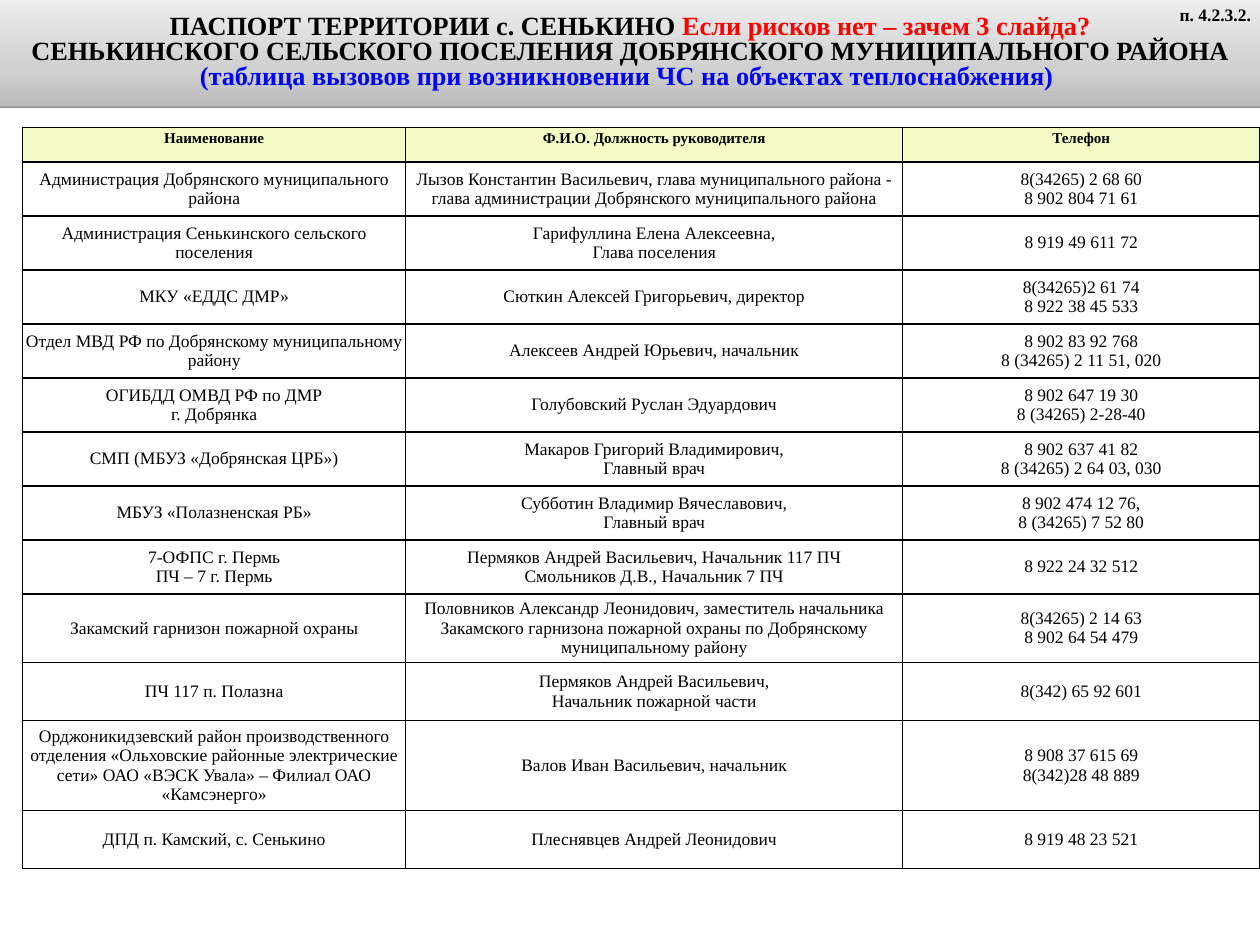
"""Builds the emergency call table slide for the village of Senkino."""
from pptx import Presentation, oxml, util as u
from pptx.dml.color import RGBColor
from pptx.enum import text as t

NS = 'xmlns:a="http://schemas.openxmlformats.org/drawingml/2006/main"'


def write(para, words, size, color="000000", bold=False, align=t.PP_ALIGN.CENTER):
    para.alignment = align
    run = para.add_run()
    run.text = words
    font = run.font
    font.name, font.size, font.bold = "Times New Roman", u.Pt(size), bold
    font.color.rgb = RGBColor.from_string(color)


deck = Presentation()
deck.slide_width, deck.slide_height = u.Inches(14), u.Inches(10.5)
slide = deck.slides.add_slide(deck.slide_layouts[5])

title = slide.shapes.title
title.left, title.top = u.Inches(0), u.Inches(0)
title.width, title.height = u.Inches(14), u.Inches(1.18)
stops = "".join(
    f'<a:gs pos="{pos * 1000}"><a:srgbClr val="{color}"/></a:gs>'
    for pos, color in [(0, "BCBCBC"), (35, "D0D0D0"), (100, "EDEDED")])
band = title.element.spPr
band.append(oxml.parse_xml(
    f'<a:gradFill {NS} rotWithShape="1"><a:gsLst>{stops}</a:gsLst>'
    '<a:lin ang="16200000" scaled="1"/></a:gradFill>'))
band.append(oxml.parse_xml(
    f'<a:effectLst {NS}><a:outerShdw blurRad="0" dist="{u.Pt(1.6)}" dir="5400000" rotWithShape="0">'
    '<a:srgbClr val="000000"><a:alpha val="38000"/></a:srgbClr></a:outerShdw></a:effectLst>'))
frame = title.text_frame
frame.word_wrap = True
frame.auto_size = t.MSO_AUTO_SIZE.NONE
frame.vertical_anchor = t.MSO_ANCHOR.MIDDLE
heads = [
    [("ПАСПОРТ ТЕРРИТОРИИ с. СЕНЬКИНО ", "000000"),
     ("Если рисков нет – зачем 3 слайда?", "FF0000")],
    [("СЕНЬКИНСКОГО СЕЛЬСКОГО ПОСЕЛЕНИЯ ДОБРЯНСКОГО МУНИЦИПАЛЬНОГО РАЙОНА", "000000")],
    [("(таблица вызовов при возникновении ЧС на объектах теплоснабжения) ", "0000FF")],
]
for i, runs in enumerate(heads):
    para = frame.add_paragraph() if i else frame.paragraphs[0]
    para.line_spacing = 0.8
    for words, color in runs:
        write(para, words, 21, color, True)

note = slide.shapes.add_textbox(u.Inches(12.91), u.Inches(0), u.Inches(1.09), u.Inches(0.33))
note.text_frame.word_wrap = True
write(note.text_frame.paragraphs[0], "п. 4.2.3.2.", 14, bold=True, align=t.PP_ALIGN.RIGHT)

rows = [
    ("Наименование", "Ф.И.О. Должность руководителя", "Телефон"),
    ("Администрация Добрянского муниципального района",
     "Лызов Константин Васильевич, глава муниципального района - "
     "глава администрации Добрянского муниципального района",
     "8(34265) 2 68 60\n8 902 804 71 61"),
    ("Администрация Сенькинского сельского поселения",
     "Гарифуллина Елена Алексеевна,\nГлава поселения", "8 919 49 611 72"),
    ("МКУ «ЕДДС ДМР»", "Сюткин Алексей Григорьевич, директор",
     "8(34265)2 61 74\n8 922 38 45 533"),
    ("Отдел МВД РФ по Добрянскому муниципальному району",
     "Алексеев Андрей Юрьевич, начальник", "8 902 83 92 768\n8 (34265) 2 11 51, 020"),
    ("ОГИБДД ОМВД РФ по ДМР\nг. Добрянка", "Голубовский Руслан Эдуардович",
     "8 902 647 19 30\n8 (34265) 2-28-40"),
    ("СМП (МБУЗ «Добрянская ЦРБ»)", "Макаров Григорий Владимирович,\nГлавный врач",
     "8 902 637 41 82\n8 (34265) 2 64 03, 030"),
    ("МБУЗ «Полазненская РБ»", "Субботин Владимир Вячеславович,\nГлавный врач",
     "8 902 474 12 76,\n8 (34265) 7 52 80"),
    ("7-ОФПС г. Пермь\nПЧ – 7 г. Пермь",
     "Пермяков Андрей Васильевич, Начальник 117 ПЧ\nСмольников Д.В., Начальник 7 ПЧ",
     "8 922 24 32 512"),
    ("Закамский гарнизон пожарной охраны",
     "Половников Александр Леонидович, заместитель начальника Закамского гарнизона "
     "пожарной охраны по Добрянскому муниципальному району",
     "8(34265) 2 14 63\n8 902 64 54 479"),
    ("ПЧ 117 п. Полазна", "Пермяков Андрей Васильевич,\nНачальник пожарной части",
     "8(342) 65 92 601"),
    ("Орджоникидзевский район производственного отделения «Ольховские районные "
     "электрические сети» ОАО «ВЭСК Увала» – Филиал ОАО «Камсэнерго»",
     "Валов Иван Васильевич, начальник", "8 908 37 615 69\n8(342)28 48 889"),
    ("ДПД п. Камский, с. Сенькино", "Плеснявцев Андрей Леонидович", "8 919 48 23 521"),
]
wides = [4.26, 5.52, 3.97]
highs = [0.38] + [0.6] * 8 + [0.75, 0.65, 0.99, 0.65]
table = slide.shapes.add_table(
    len(rows), len(wides), u.Inches(0.25), u.Inches(1.42),
    u.Inches(sum(wides)), u.Inches(sum(highs))).table
table.first_row = table.horz_banding = False
for col, wide in zip(table.columns, wides):
    col.width = u.Inches(wide)
for row, high in zip(table.rows, highs):
    row.height = u.Inches(high)

for r, cells in enumerate(rows):
    for c, words in enumerate(cells):
        cell = table.cell(r, c)
        cell.margin_left = cell.margin_right = u.Inches(0.03)
        cell.margin_top = cell.margin_bottom = u.Inches(0.03)
        cell.vertical_anchor = t.MSO_ANCHOR.MIDDLE if r else t.MSO_ANCHOR.TOP
        if r:
            cell.fill.background()
        else:
            cell.fill.solid()
            cell.fill.fore_color.rgb = RGBColor.from_string("F4FBC7")
        props = cell._tc.get_or_add_tcPr()
        for i, side in enumerate("LRTB"):
            props.insert(i, oxml.parse_xml(
                f'<a:ln{side} {NS} w="{u.Pt(1)}"><a:solidFill><a:srgbClr val="000000"/>'
                f'</a:solidFill></a:ln{side}>'))
        for i, line in enumerate(words.split("\n")):
            body = cell.text_frame
            para = body.add_paragraph() if i else body.paragraphs[0]
            write(para, line, 14 if r else 12, bold=not r)

deck.save("out.pptx")
